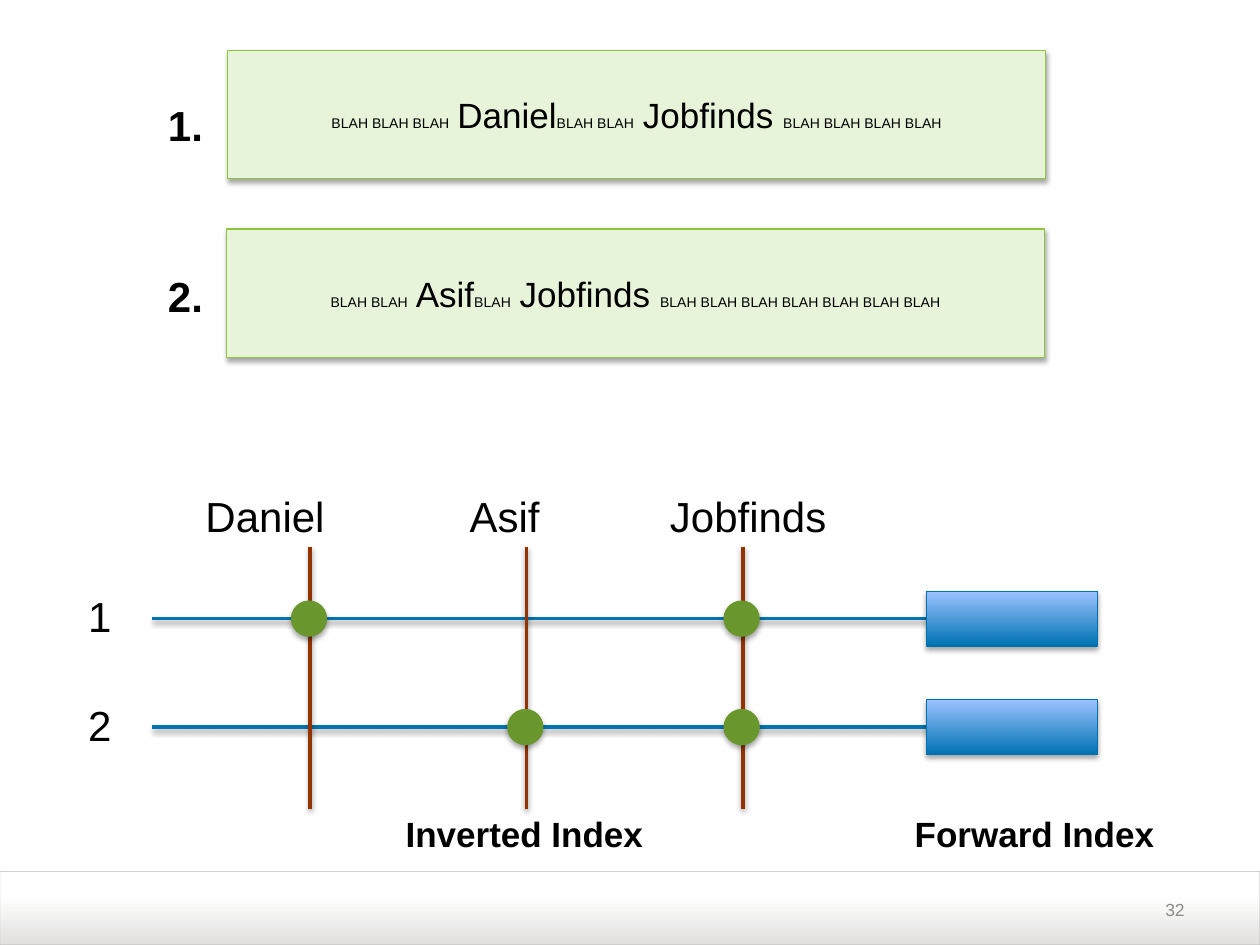
import pptx
import pptx.util
import pptx.dml.color
import pptx.enum.shapes
import pptx.enum.text
import pptx.oxml
import pptx.oxml.ns
import lxml.etree

Pt = pptx.util.Pt
SHAPE = pptx.enum.shapes.MSO_SHAPE
ALIGN = pptx.enum.text.PP_ALIGN
ANCHOR = pptx.enum.text.MSO_ANCHOR

COLORS = {
    "text": "000000", "number": "8C8C8C", "footer": "E1E0DF", "white": "FFFFFF",
    "footer_line": "A6A6A6", "doc": "E8F4D9", "doc_line": "8CC63F",
    "row": "0073B2", "row_light": "9BC2FF", "row_line": "0070AE",
    "term": "923401", "hit": "69972D",
}


def rgb(name):
    return pptx.dml.color.RGBColor.from_string(COLORS[name])


class Deck:
    """Holds the text style and the current slide; all lengths are points."""

    font = "Arial"

    def __init__(self, width, height):
        self.prs = pptx.Presentation()
        self.prs.slide_width, self.prs.slide_height = Pt(width), Pt(height)
        self.slide = self.prs.slides.add_slide(self.prs.slide_layouts[6])

    def shadow(self, sp, alpha, dist):
        """Replace the theme effects by one soft shadow falling downwards."""
        spPr = sp._element.spPr
        effects = lxml.etree.SubElement(spPr, pptx.oxml.ns.qn("a:effectLst"))
        effects.append(pptx.oxml.parse_xml(
            f'<a:outerShdw {pptx.oxml.ns.nsdecls("a")} blurRad="{Pt(3.1)}" '
            f'dist="{Pt(dist)}" dir="5400000" rotWithShape="0">'
            f'<a:srgbClr val="{COLORS["text"]}"><a:alpha val="{alpha * 1000}"/>'
            '</a:srgbClr></a:outerShdw>'))

    def shape(self, kind, x, y, w, h, fill, line, line_width=0.75, shadow=True):
        """Draw a shape; fill is a colour or (bottom colour, top colour, top stop)."""
        sp = self.slide.shapes.add_shape(kind, Pt(x), Pt(y), Pt(w), Pt(h))
        if isinstance(fill, tuple):
            bottom, top, stop = fill
            sp.fill.gradient()
            sp.fill.gradient_angle = 90
            stops = sp.fill.gradient_stops
            stops[0].color.rgb, stops[0].position = rgb(bottom), 0
            stops[1].color.rgb, stops[1].position = rgb(top), stop
        else:
            sp.fill.solid()
            sp.fill.fore_color.rgb = rgb(fill)
        sp.line.color.rgb = rgb(line)
        sp.line.width = Pt(line_width)
        if shadow:
            self.shadow(sp, 35, 1.8)
        else:
            sp.shadow.inherit = False
        return sp

    def line(self, x1, y1, x2, y2, color):
        cx = self.slide.shapes.add_connector(
            pptx.enum.shapes.MSO_CONNECTOR.STRAIGHT, Pt(x1), Pt(y1), Pt(x2), Pt(y2))
        cx.line.color.rgb = rgb(color)
        cx.line.width = Pt(2)
        self.shadow(cx, 38, 1.6)

    def runs(self, sp, runs, align, color="text", bold=False):
        """Write (text, size) runs into the first paragraph."""
        p = sp.text_frame.paragraphs[0]
        p.alignment = align
        for text, size in runs:
            r = p.add_run()
            r.text = text
            r.font.name, r.font.size, r.font.bold = self.font, Pt(size), bold
            r.font.color.rgb = rgb(color)

    def label(self, x, y, text, w=72, size=24, bold=False):
        sp = self.slide.shapes.add_textbox(Pt(x), Pt(y), Pt(w), Pt(72))
        sp.text_frame.word_wrap = True
        sp.text_frame.margin_left = 0
        self.runs(sp, [(text, size)], ALIGN.LEFT, bold=bold)

    def page_number(self, x, y, w, h, text):
        sp = self.slide.shapes.add_textbox(Pt(x), Pt(y), Pt(w), Pt(h))
        sp.text_frame.word_wrap = True
        sp.text_frame.vertical_anchor = ANCHOR.MIDDLE
        self.runs(sp, [(text, 10)], ALIGN.RIGHT, "number")

    def document(self, x, y, runs):
        sp = self.shape(SHAPE.RECTANGLE, x, y, 467.3, 73.4, "doc", "doc_line")
        sp.text_frame.word_wrap = True
        sp.text_frame.vertical_anchor = ANCHOR.MIDDLE
        self.runs(sp, runs, ALIGN.CENTER)

    def hit(self, x, y, d=20):
        self.shape(SHAPE.OVAL, x - d / 2, y - d / 2, d, d, "hit", "hit")


def main():
    deck = Deck(720, 540)

    footer = deck.shape(SHAPE.RECTANGLE, 0, 498, 720, 42,
                        ("footer", "white", 0.68), "footer_line", 0.25, shadow=False)
    line_color = footer.line._ln.find(".//" + pptx.oxml.ns.qn("a:srgbClr"))
    lxml.etree.SubElement(line_color, pptx.oxml.ns.qn("a:alpha")).set("val", "79000")
    deck.page_number(516, 505.5, 168, 28.8, "32")

    big, gap, small = 20, 18, 8
    deck.document(130.2, 28.8, [
        ("BLAH BLAH BLAH", small), (" ", 16), ("Daniel", big), ("BLAH BLAH", small),
        (" ", gap), ("Jobfinds ", big), ("BLAH BLAH BLAH BLAH", small)])
    deck.document(129.6, 130.8, [
        ("BLAH BLAH", small), (" ", 16), ("Asif", big), ("BLAH", small),
        (" ", gap), ("Jobfinds ", big), ("BLAH BLAH BLAH BLAH BLAH BLAH BLAH", small)])
    for text, y in (("1.", 53.3), ("2.", 151.2)):
        deck.label(96, y, text, bold=True)

    term_x = [177.3 + 123.6 * i for i in range(3)]
    row_y = [353.5 + 62 * i for i in range(2)]
    for text, x in (("Daniel", 117.4), ("Asif", 268.3), ("Jobfinds", 382.8)):
        deck.label(x, 276.5, text, w=110)
    for number, y in enumerate(row_y, 1):
        deck.label(50.4, y - 19.5, str(number))
        deck.line(87, y, 562, y, "row")
    for x in term_x:
        deck.line(x, 312.3, x, 462.3, "term")
    for term, row in ((2, 1), (2, 0), (1, 1), (0, 0)):
        deck.hit(term_x[term] - 0.7, row_y[row])
    for y in row_y:
        deck.shape(SHAPE.RECTANGLE, 529.6, y - 15.6, 97.5, 31.2,
                   ("row", "row_light", 1), "row_line")

    for text, x in (("Inverted Index", 231.8), ("Forward Index", 522.7)):
        deck.label(x, 461, text, w=160, size=20, bold=True)

    deck.prs.save("out.pptx")


if __name__ == "__main__":
    main()
